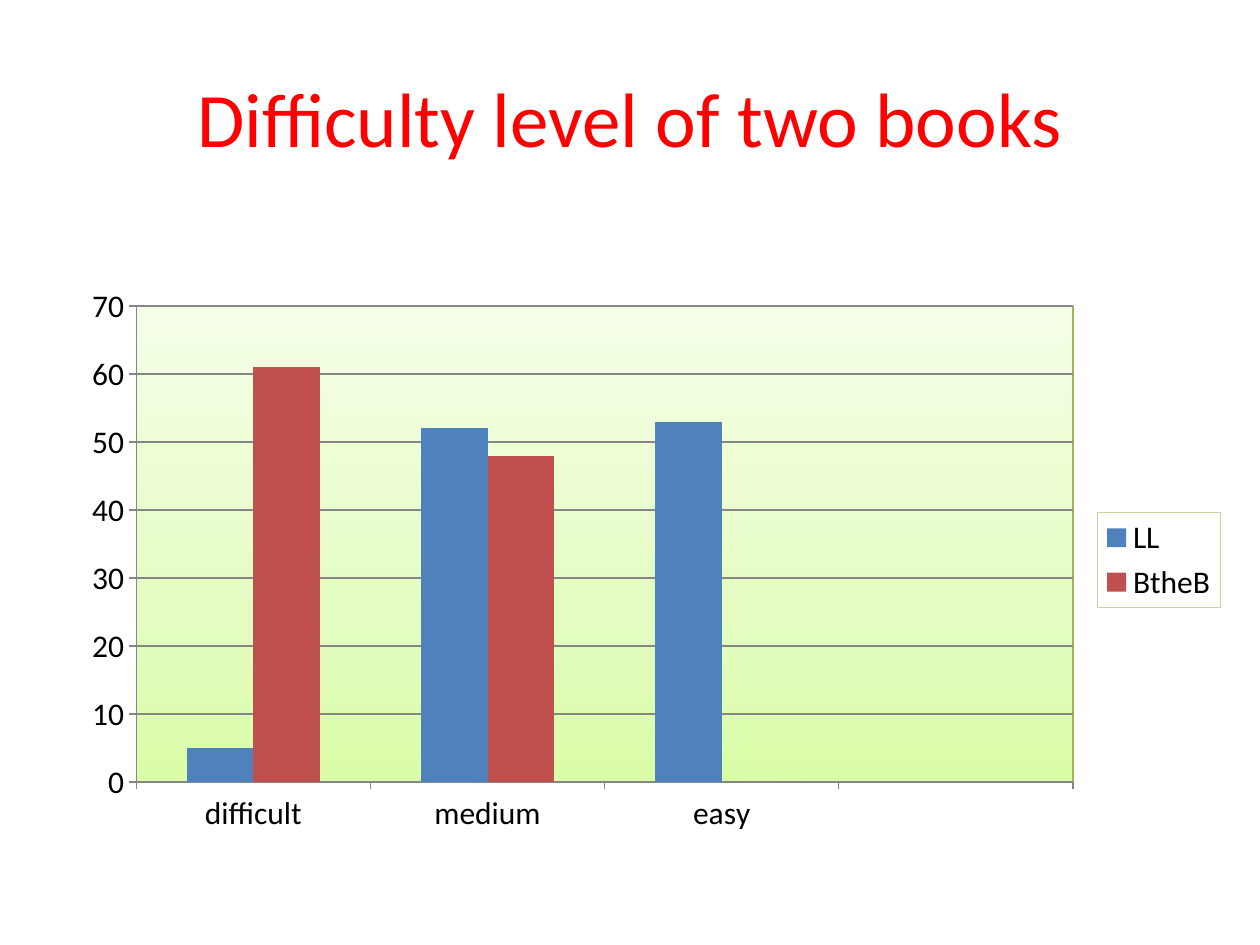
from lxml.etree import fromstring
from pptx import Presentation
from pptx.chart.data import CategoryChartData
from pptx.dml.color import RGBColor
from pptx.enum.chart import XL_CHART_TYPE, XL_LEGEND_POSITION, XL_TICK_MARK
from pptx.enum.text import MSO_ANCHOR, PP_ALIGN
from pptx.oxml.ns import nsdecls, qn
from pptx.util import Pt

PX = 914400 // 126
CHART_BOX = (69, 276, 1162, 568)
PLOT_BOX = (136, 306, 937, 476)


def color(hex_code):
    return RGBColor.from_string(hex_code)


def write_text(frame, text, size=18, font="Calibri", fill="000000", align=PP_ALIGN.CENTER):
    frame.word_wrap = True
    frame.vertical_anchor = MSO_ANCHOR.MIDDLE
    paragraph = frame.paragraphs[0]
    paragraph.alignment = align
    run = paragraph.add_run()
    run.text = text
    run.font.size, run.font.name = Pt(size), font
    run.font.color.rgb = color(fill)


presentation = Presentation()
presentation.slide_width, presentation.slide_height = 1260 * PX, 945 * PX
slide = presentation.slides.add_slide(presentation.slide_layouts[5])

# Title
title = slide.shapes.title
title.left, title.top, title.width, title.height = (n * PX for n in (63, 38, 1134, 157))
write_text(title.text_frame, "Difficulty level of two books", size=44, fill="FF0000")

# Difficulty chart, with an empty fourth category
ratings = CategoryChartData()
ratings.categories = ["difficult", "medium", "easy", ""]
ratings.add_series("LL", (5, 52, 53, None))
ratings.add_series("BtheB", (61, 48, 0, None))
chart = slide.shapes.add_chart(
    XL_CHART_TYPE.COLUMN_CLUSTERED, *(n * PX for n in CHART_BOX), ratings).chart
chart.has_title = False
chart.font.size, chart.font.name = Pt(18), "Calibri"
chart.font.color.rgb = color("000000")

bars = chart.plots[0]
bars.gap_width, bars.overlap, bars.vary_by_categories = 150, 0, False
for book, fill in zip(bars.series, ("4F81BD", "C0504D")):
    book.format.fill.solid()
    book.format.fill.fore_color.rgb = color(fill)

levels, scores = chart.category_axis, chart.value_axis
scores.minimum_scale, scores.maximum_scale, scores.major_unit = 0, 70, 10
scores.has_major_gridlines = True
for axis in (levels, scores):
    axis.major_tick_mark = XL_TICK_MARK.OUTSIDE
    axis.minor_tick_mark = XL_TICK_MARK.NONE
for line in (levels.format.line, scores.format.line, scores.major_gridlines.format.line):
    line.color.rgb = color("868686")
    line.width = Pt(0.75)

chart.has_legend = True
chart.legend.position = XL_LEGEND_POSITION.RIGHT
chart.legend.include_in_layout = False

# Plot area: fixed inner position and green gradient
left, top, width, height = CHART_BOX
plot_left, plot_top, plot_width, plot_height = PLOT_BOX
fractions = {"x": (plot_left - left) / width, "y": (plot_top - top) / height,
             "w": plot_width / width, "h": plot_height / height}
places = "".join(f'<c:{side} val="{part:.3f}"/>' for side, part in fractions.items())
plot_area = chart._chartSpace.chart.plotArea
for old_layout in plot_area.findall(qn("c:layout")):
    plot_area.remove(old_layout)
plot_area.insert(0, fromstring(
    f'<c:layout {nsdecls("c")}><c:manualLayout><c:layoutTarget val="inner"/>'
    f'<c:xMode val="edge"/><c:yMode val="edge"/>{places}</c:manualLayout></c:layout>'))

stops = "".join(f'<a:gs pos="{percent * 1000}"><a:srgbClr val="{fill}"/></a:gs>'
                for percent, fill in ((0, "DAFDA7"), (35, "E4FCC2"), (100, "F5FFE7")))
plot_area.append(fromstring(
    f'<c:spPr {nsdecls("c", "a")}><a:gradFill><a:gsLst>{stops}</a:gsLst>'
    '<a:lin ang="16200000" scaled="1"/></a:gradFill>'
    '<a:ln w="9525"><a:solidFill><a:srgbClr val="98B954"/></a:solidFill></a:ln></c:spPr>'))

legend_frame = fromstring(
    f'<c:spPr {nsdecls("c", "a")}><a:solidFill><a:srgbClr val="FFFFFF"/></a:solidFill>'
    '<a:ln w="3175"><a:solidFill><a:srgbClr val="C3D69B"/></a:solidFill></a:ln></c:spPr>')
chart.legend._element.find(qn("c:overlay")).addnext(legend_frame)

presentation.save("out.pptx")
